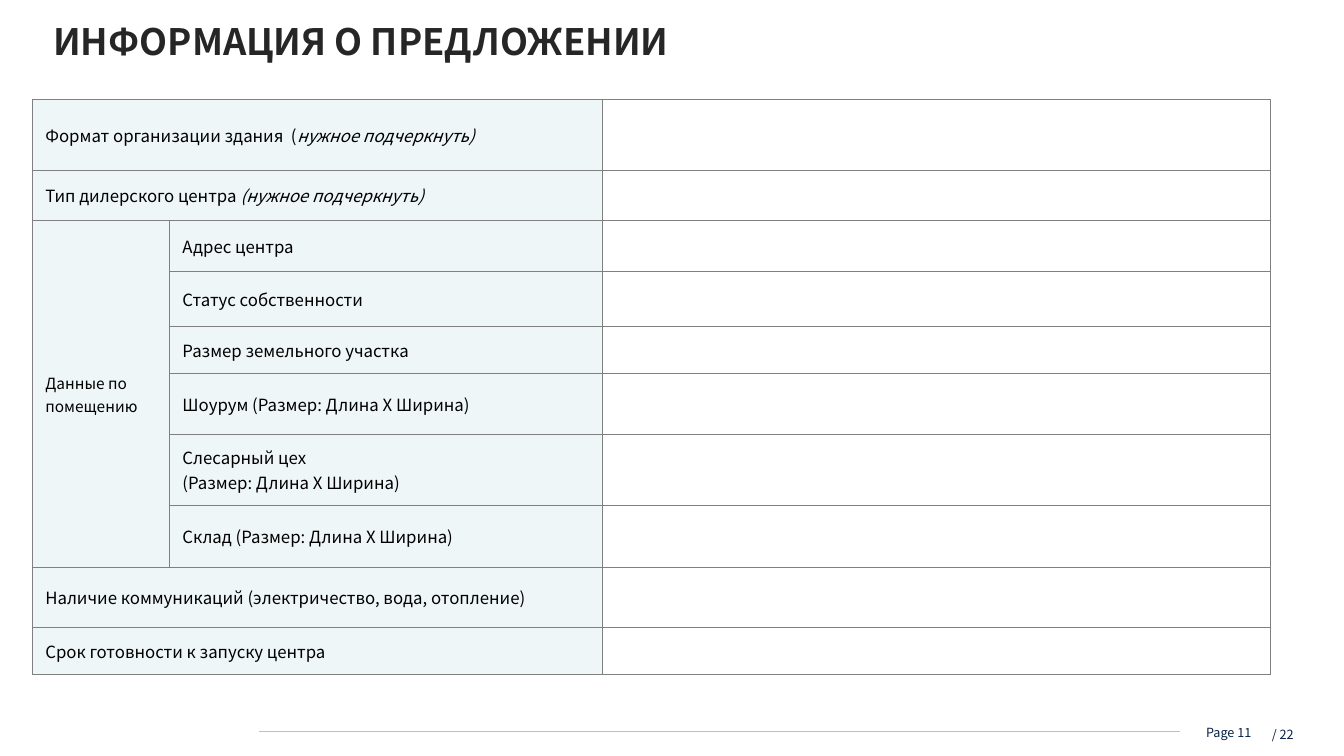
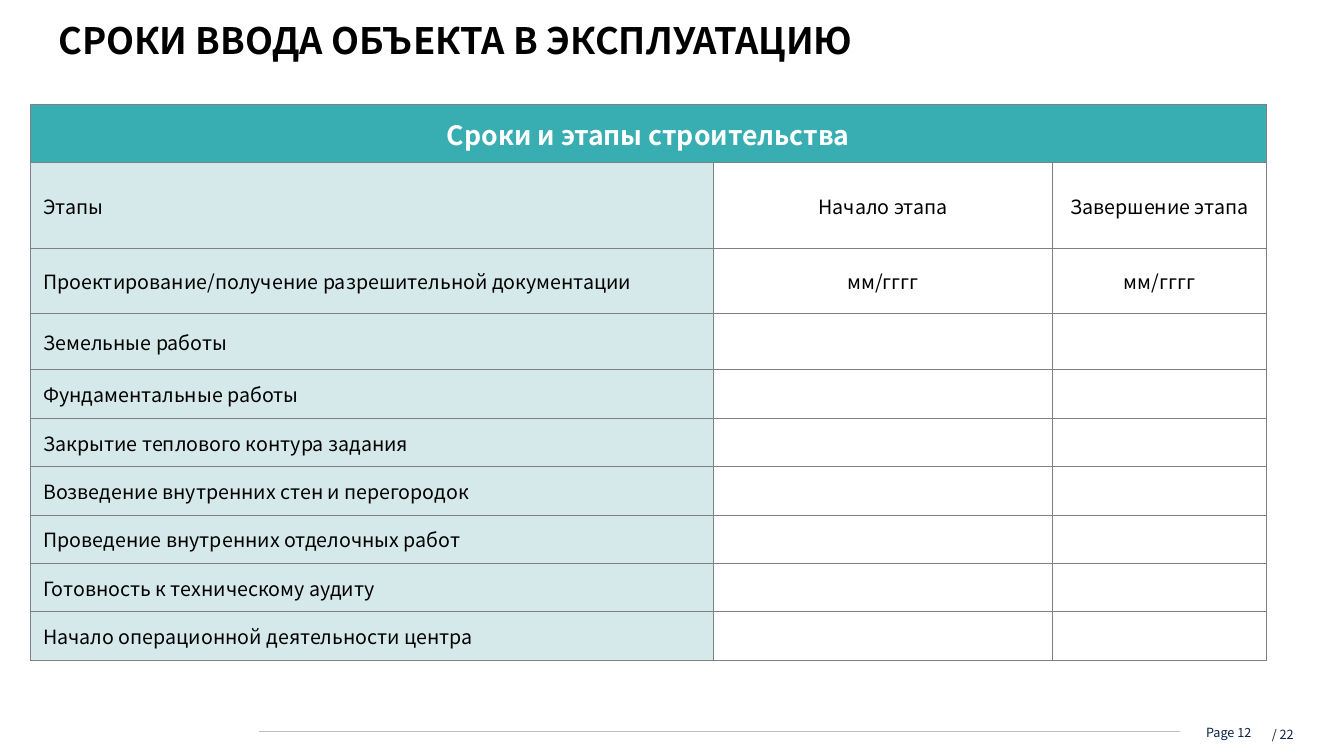
from lxml import etree
from pptx import Presentation
from pptx.dml.color import RGBColor
from pptx.enum.shapes import MSO_CONNECTOR
from pptx.enum.text import MSO_ANCHOR, PP_ALIGN
from pptx.oxml.ns import qn
from pptx.util import Inches, Pt

FONT = "Noto Sans CJK SC"
WHITE = RGBColor(0xFF, 0xFF, 0xFF)
BLACK = RGBColor(0x00, 0x00, 0x00)
CHARCOAL = RGBColor(0x26, 0x26, 0x26)
NAVY = RGBColor(0x07, 0x21, 0x46)
RULE_GRAY = RGBColor(0xBF, 0xBF, 0xBF)
BORDER_GRAY = RGBColor(0x80, 0x80, 0x80)
TEAL = RGBColor(0x39, 0xAE, 0xB2)
PALE_TEAL = RGBColor(0xD6, 0xE9, 0xEA)
FAINT_TEAL = RGBColor(0xEF, 0xF6, 0xF7)

LEFT = PP_ALIGN.LEFT
CENTER = PP_ALIGN.CENTER
RIGHT = PP_ALIGN.RIGHT
MIDDLE = MSO_ANCHOR.MIDDLE
STRAIGHT = MSO_CONNECTOR.STRAIGHT

PAGE_COUNT = 22
HINT = "нужное подчеркнуть)"


def add_span(para, text, size, color, bold=False, italic=False):
    for index, line in enumerate(text.split("\n")):
        if index:
            para.add_line_break()
        span = para.add_run()
        span.text = line
        font = span.font
        font.name, font.size = FONT, Pt(size)
        font.bold, font.italic = bold, italic
        font.color.rgb = color


def add_text(page, bounds, text, size, color, insets=(0, 0), bold=False,
             align=LEFT, spacing=1.0):
    box = page.shapes.add_textbox(*map(Inches, bounds))
    frame = box.text_frame
    frame.word_wrap = True
    frame.margin_left = frame.margin_right = Inches(insets[0])
    frame.margin_top = frame.margin_bottom = Inches(insets[1])
    para = frame.paragraphs[0]
    para.alignment = align
    para.line_spacing = spacing
    add_span(para, text, size, color, bold)


def add_title(page, bounds, text, color):
    add_text(page, bounds, text, 26, color, (0.1, 0), bold=True, spacing=0.9)


def add_footer(page, number):
    add_text(page, (11.05, 7.19, 1.36, 0.33), f"Page {number}", 9, NAVY,
             align=RIGHT)
    add_text(page, (11.87, 7.1, 1, 0.31), f"/ {PAGE_COUNT}", 9, NAVY,
             (0.04, 0.04), align=RIGHT, spacing=1.5)
    rule = page.shapes.add_connector(
        STRAIGHT, Inches(2.57), Inches(7.26), Inches(11.7), Inches(7.26))
    rule.line.color.rgb = RULE_GRAY
    rule.line.width = Pt(0.5)
    etree.SubElement(rule._element.spPr, qn("a:effectLst"))


def add_borders(cell):
    properties = cell._tc.get_or_add_tcPr()
    for index, side in enumerate(("lnL", "lnR", "lnT", "lnB")):
        line = etree.Element(qn(f"a:{side}"), w=str(Pt(0.75)))
        fill = etree.SubElement(line, qn("a:solidFill"))
        etree.SubElement(fill, qn("a:srgbClr"), val=str(BORDER_GRAY))
        properties.insert(index, line)


def add_grid(page, left, top, widths, heights):
    frame = page.shapes.add_table(
        len(heights), len(widths), Inches(left), Inches(top),
        Inches(sum(widths)), Inches(sum(heights)))
    table = frame.table
    table.first_row = table.horz_banding = False
    for column, width in zip(table.columns, widths):
        column.width = Inches(width)
    for row, height in zip(table.rows, heights):
        row.height = Inches(height)
    for cell in table.iter_cells():
        cell.fill.background()
        add_borders(cell)
    return table


def fill_cell(cell, text, size, fill=None, color=BLACK, bold=False,
              align=LEFT, hint=""):
    cell.vertical_anchor = MIDDLE
    cell.margin_left = cell.margin_right = Inches(0.13)
    cell.margin_top = cell.margin_bottom = Inches(0.05)
    if fill is not None:
        cell.fill.solid()
        cell.fill.fore_color.rgb = fill
    para = cell.text_frame.paragraphs[0]
    para.alignment = align
    add_span(para, text, size, color, bold)
    if hint:
        add_span(para, hint, size, color, bold, italic=True)


def add_offer_page(deck):
    page = deck.slides.add_slide(deck.slide_layouts[6])
    add_footer(page, 11)
    add_title(page, (0.43, 0.24, 12.18, 0.62), "ИНФОРМАЦИЯ О ПРЕДЛОЖЕНИИ",
              CHARCOAL)
    table = add_grid(page, 0.32, 0.99, (1.36, 4.3, 6.62),
                     (0.7, 0.5, 0.5, 0.55, 0.47, 0.6, 0.7, 0.62, 0.6, 0.46))
    wide_rows = (
        (0, "Формат организации здания  (", HINT),
        (1, "Тип дилерского центра ", "(" + HINT),
        (8, "Наличие коммуникаций (электричество, вода, отопление)", ""),
        (9, "Срок готовности к запуску центра", ""),
    )
    for row, text, hint in wide_rows:
        table.cell(row, 0).merge(table.cell(row, 1))
        fill_cell(table.cell(row, 0), text, 12, FAINT_TEAL, hint=hint)
    premises = (
        "Адрес центра",
        "Статус собственности",
        "Размер земельного участка",
        "Шоурум (Размер: Длина Х Ширина)",
        "Слесарный цех\n(Размер: Длина Х Ширина)",
        "Склад (Размер: Длина Х Ширина)",
    )
    table.cell(2, 0).merge(table.cell(7, 0))
    fill_cell(table.cell(2, 0), "Данные по помещению", 11, FAINT_TEAL)
    for row, text in enumerate(premises, start=2):
        fill_cell(table.cell(row, 1), text, 12, FAINT_TEAL)


def add_schedule_page(deck):
    page = deck.slides.add_slide(deck.slide_layouts[6])
    add_footer(page, 12)
    add_title(page, (0.48, 0.23, 8.8, 0.54),
              "СРОКИ ВВОДА ОБЪЕКТА В ЭКСПЛУАТАЦИЮ", BLACK)
    table = add_grid(page, 0.3, 1.04, (6.78, 3.36, 2.12),
                     (0.57, 0.86, 0.64, 0.56) + (0.48,) * 6)
    table.cell(0, 0).merge(table.cell(0, 2))
    fill_cell(table.cell(0, 0), "Сроки и этапы строительства", 19, TEAL,
              WHITE, bold=True, align=CENTER)
    stages = (
        ("Этапы", "Начало этапа", "Завершение этапа"),
        ("Проектирование/получение разрешительной документации",
         "мм/гггг", "мм/гггг"),
        ("Земельные работы",),
        ("Фундаментальные работы",),
        ("Закрытие теплового контура задания",),
        ("Возведение внутренних стен и перегородок",),
        ("Проведение внутренних отделочных работ",),
        ("Готовность к техническому аудиту",),
        ("Начало операционной деятельности центра",),
    )
    for row, (stage, *dates) in enumerate(stages, start=1):
        fill_cell(table.cell(row, 0), stage, 14, PALE_TEAL)
        for column, date in enumerate(dates, start=1):
            fill_cell(table.cell(row, column), date, 14, align=CENTER)


def main():
    deck = Presentation()
    deck.slide_width = Inches(13.33)
    deck.slide_height = Inches(7.5)
    add_offer_page(deck)
    add_schedule_page(deck)
    deck.save("out.pptx")


if __name__ == "__main__":
    main()
